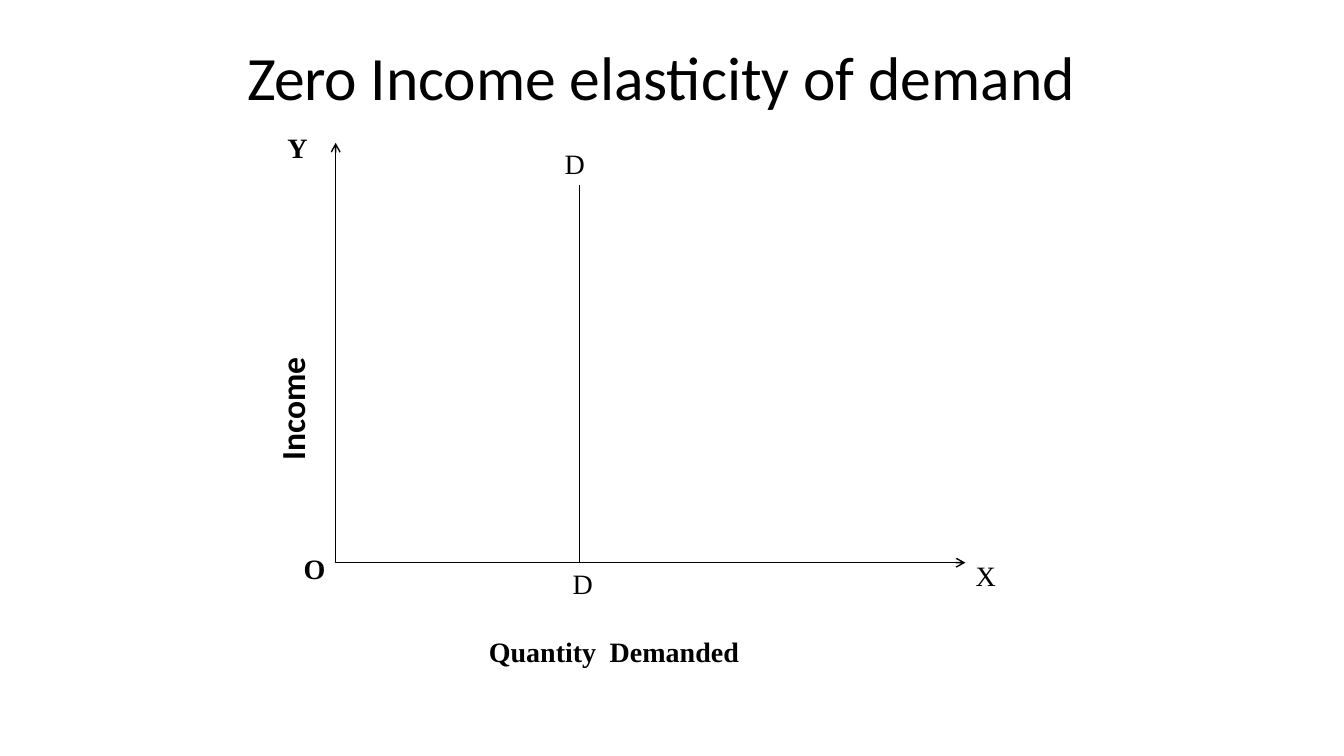
"""Builds a slide showing zero income elasticity of demand."""
from typing import NamedTuple

from lxml.etree import SubElement
from pptx import Presentation
from pptx.dml.color import RGBColor as Rgb
from pptx.dml.line import LineFormat as Pen
from pptx.enum.shapes import MSO_CONNECTOR as Link
from pptx.enum.text import MSO_ANCHOR as Anchor
from pptx.oxml.ns import qn
from pptx.shapes.shapetree import SlideShapes as Shapes
from pptx.util import Cm, Pt

HUES = {"ink": "000000", "page": "FFFFFF"}
TITLE = {"name": "Calibri", "size": Pt(44), "bold": False}
MARK = {"name": "Times New Roman", "size": Pt(20), "bold": False}
BOLD = {**MARK, "bold": True}
SIDE = {"name": "Calibri", "size": Pt(24), "bold": True}
LEFT, BASE = 8.46, 14.18


class Label(NamedTuple):
    runs: list[tuple[str, int]]
    x: float
    y: float
    font: dict
    wide: float = 0.6
    high: float = 0.91
    turn: str = "horz"


class Point(NamedTuple):
    x: float
    y: float


LABELS = [
    Label([("Zero ", -30), ("Income elasticity ", -10), ("of demand", 0)],
          6.2, 0.92, TITLE, 21.51, 1.93),
    Label([("Y", 0)], 7.21, 3.25, BOLD),
    Label([("X", 0)], 24.56, 14.05, MARK),
    Label([("O", 0)], 7.62, 13.87, BOLD),
    Label([("D", 0)], 14.4, 14.25, MARK),
    Label([("D", 0)], 14.2, 3.66, MARK),
    Label([("Quantity", 0), (" ", 450), ("Demanded", 0)],
          12.29, 15.95, BOLD, 6.38),
    Label([("I", 0), ("nc", -10), ("o", 0), ("m", 10), ("e", 0)],
          7.02, 8.97, SIDE, 0.86, 2.67, "vert270"),
]
AXES = [Point(LEFT, 3.6), Point(LEFT, BASE), Point(24.33, BASE)]
DEMAND = [Point(14.6, 4.65), Point(14.6, BASE)]


def write(shapes: Shapes, label: Label) -> None:
    """Add one text label."""
    box = shapes.add_textbox(Cm(label.x), Cm(label.y),
                             Cm(label.wide), Cm(label.high))
    frame = box.text_frame
    upright = label.turn == "horz"
    look = {"margin_left": Cm(0.03) if upright else 0, "margin_right": 0,
            "margin_top": Cm(0.03) if upright else 0,
            "margin_bottom": 0, "word_wrap": True,
            "vertical_anchor": Anchor.MIDDLE if label.font is TITLE
            else Anchor.TOP}
    for key, value in look.items():
        setattr(frame, key, value)
    para = frame.paragraphs[0]
    if not upright:
        frame._txBody.bodyPr.set("vert", label.turn)
        para._p.get_or_add_pPr().set("marL", str(Cm(0.03)))
        para.line_spacing = Pt(23.8)
    for text, gap in label.runs:
        run = para.add_run()
        run.text = text
        for key, value in label.font.items():
            setattr(run.font, key, value)
        run.font.color.rgb = Rgb.from_string(HUES["ink"])
        if gap:
            run._r.get_or_add_rPr().set("spc", str(gap))


def ink(pen: Pen) -> None:
    """Set the common line style."""
    pen.width = Pt(1)
    pen.color.rgb = Rgb.from_string(HUES["ink"])


def draw_axes(shapes: Shapes) -> None:
    """Add both axes as one open outline with an arrowhead at each end."""
    top, *rest = [(Cm(x), Cm(y)) for x, y in AXES]
    pen = shapes.build_freeform(*top)
    pen.add_line_segments(rest, close=False)
    axes = pen.convert_to_shape()
    axes.shadow.inherit = False
    axes.fill.background()
    ink(axes.line)
    for end in ("a:headEnd", "a:tailEnd"):
        SubElement(axes.line._get_or_add_ln(), qn(end),
                   type="arrow", w="med", len="med")


def draw_demand(shapes: Shapes) -> None:
    """Add the vertical demand line."""
    top, foot = DEMAND
    link = shapes.add_connector(Link.STRAIGHT, Cm(top.x), Cm(top.y),
                                Cm(foot.x), Cm(foot.y))
    ink(link.line)
    SubElement(link._element.spPr, qn("a:effectLst"))


def main() -> None:
    """Build and save the slide."""
    deck = Presentation()
    deck.slide_width, deck.slide_height = Cm(33.87), Cm(19.05)
    slide = deck.slides.add_slide(deck.slide_layouts[6])
    fill = slide.background.fill
    fill.solid()
    fill.fore_color.rgb = Rgb.from_string(HUES["page"])
    draw_axes(slide.shapes)
    draw_demand(slide.shapes)
    for label in LABELS:
        write(slide.shapes, label)
    deck.save("out.pptx")


if __name__ == "__main__":
    main()
